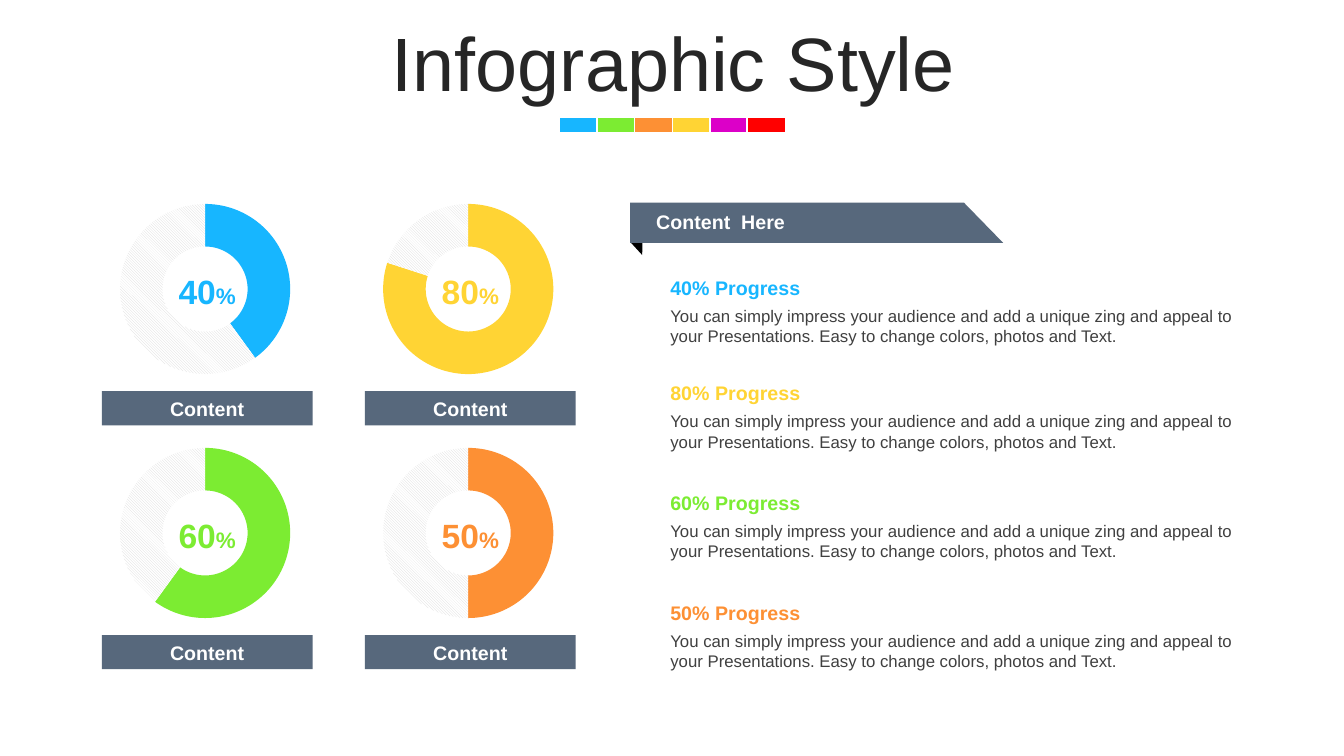
from dataclasses import dataclass

from lxml import etree
from pptx import Presentation
from pptx import util as u
from pptx.chart import data as chart_data
from pptx.dml.color import RGBColor
from pptx.enum import chart as chart_enum
from pptx.enum import dml, shapes, text
from pptx.oxml.ns import qn

PX = 9144  # EMU per px, 100 px to the inch
FONT = "Arial"

BLUE = RGBColor(0x17, 0xB6, 0xFF)
GREEN = RGBColor(0x7C, 0xEC, 0x32)
ORANGE = RGBColor(0xFD, 0x90, 0x34)
YELLOW = RGBColor(0xFF, 0xD4, 0x34)
MAGENTA = RGBColor(0xDC, 0x00, 0xC8)
RED = RGBColor(0xFF, 0x00, 0x00)
SLATE = RGBColor(0x57, 0x68, 0x7C)
WHITE = RGBColor(0xFF, 0xFF, 0xFF)
BLACK = RGBColor(0x00, 0x00, 0x00)
TITLE_GREY = RGBColor(0x26, 0x26, 0x26)
TEXT_GREY = RGBColor(0x40, 0x40, 0x40)
HATCH_GREY = RGBColor(0xD9, 0xD9, 0xD9)

STRIP_COLOURS = (BLUE, GREEN, ORANGE, YELLOW, MAGENTA, RED)
COLUMN_PITCH, ROW_PITCH = 261, 242
DESCRIPTION = (
    "You can simply impress your audience and add a unique zing and appeal to "
    "your Presentations. Easy to change colors, photos and Text."
)


@dataclass(frozen=True)
class Box:
    left: int
    top: int
    width: int
    height: int

    def emu(self) -> tuple[int, ...]:
        return tuple(n * PX for n in (self.left, self.top, self.width, self.height))

    def moved(self, right: int, down: int) -> "Box":
        return Box(self.left + right, self.top + down, self.width, self.height)


@dataclass(frozen=True)
class Span:
    words: str
    size: int
    colour: RGBColor
    bold: bool = True


@dataclass(frozen=True)
class Progress:
    percent: int
    colour: RGBColor
    column: int
    row: int
    text_top: int


PROGRESS = (
    Progress(40, BLUE, 0, 0, 268),
    Progress(80, YELLOW, 1, 0, 373),
    Progress(60, GREEN, 0, 1, 482),
    Progress(50, ORANGE, 1, 1, 591),
)


def write(shape, spans: list[Span], centred: bool = False, top: bool = False) -> None:
    frame = shape.text_frame
    frame.word_wrap = True
    frame.auto_size = text.MSO_AUTO_SIZE.NONE
    frame.vertical_anchor = text.MSO_ANCHOR.TOP if top else text.MSO_ANCHOR.MIDDLE
    para = frame.paragraphs[0]
    para.alignment = text.PP_ALIGN.CENTER if centred else text.PP_ALIGN.LEFT
    for span in spans:
        run = para.add_run()
        run.text = span.words
        run.font.name = FONT
        run.font.size = u.Pt(span.size)
        run.font.bold = span.bold
        run.font.color.rgb = span.colour


def add_text(page, box: Box, spans: list[Span], centred: bool = False, top: bool = False) -> None:
    write(page.shapes.add_textbox(*box.emu()), spans, centred, top)


def paint(shape, colour: RGBColor) -> None:
    shape.shadow.inherit = False
    shape.fill.solid()
    shape.fill.fore_color.rgb = colour
    shape.line.fill.background()


def add_bar(page, box: Box, colour: RGBColor):
    bar = page.shapes.add_shape(shapes.MSO_SHAPE.RECTANGLE, *box.emu())
    paint(bar, colour)
    return bar


def add_outline(page, points: list[tuple[int, int]], colour: RGBColor) -> None:
    builder = page.shapes.build_freeform(*points[0], scale=PX)
    builder.add_line_segments(points[1:], close=True)
    paint(builder.convert_to_shape(), colour)


def place_plot(chart) -> None:
    """Fix the inner plot area and the size of the ring's hole."""
    plot_area = chart._chartSpace.find(".//" + qn("c:plotArea"))
    for old in plot_area.findall(qn("c:layout")):
        plot_area.remove(old)
    layout = etree.Element(qn("c:layout"))
    manual = etree.SubElement(layout, qn("c:manualLayout"))
    settings = (("layoutTarget", "inner"), ("xMode", "edge"), ("yMode", "edge"),
                ("x", "0"), ("y", "0"), ("w", "0.976"), ("h", "0.942"))
    for name, value in settings:
        etree.SubElement(manual, qn(f"c:{name}")).set("val", value)
    plot_area.insert(0, layout)
    plot_area.find(".//" + qn("c:holeSize")).set("val", "75")


def add_ring(page, box: Box, item: Progress) -> None:
    values = chart_data.CategoryChartData()
    values.categories = ["1", "2"]
    values.add_series("Series 1", (item.percent, 100 - item.percent))
    kind = chart_enum.XL_CHART_TYPE.DOUGHNUT
    chart = page.shapes.add_chart(kind, *box.emu(), values).chart
    chart.has_legend = False
    chart.has_title = False
    chart.font.name = FONT
    chart.font.size = u.Pt(18)
    chart.font.color.rgb = BLACK
    place_plot(chart)
    done, rest = (chart.series[0].points[i].format for i in range(2))
    done.fill.solid()
    done.fill.fore_color.rgb = item.colour
    rest.fill.patterned()
    rest.fill.pattern = dml.MSO_PATTERN.LIGHT_DOWNWARD_DIAGONAL
    rest.fill.fore_color.rgb = HATCH_GREY
    rest.fill.back_color.rgb = WHITE
    for part in (done, rest):
        part.line.fill.background()


def add_title(page) -> None:
    title = page.shapes.title
    title.left, title.top, title.width, title.height = Box(35, 24, 1266, 79).emu()
    write(title, [Span("Infographic Style", 54, TITLE_GREY, False)], centred=True)
    title.text_frame.margin_top = 10 * PX
    para = title.text_frame.paragraphs[0]
    para.line_spacing = 0.9
    para.space_before = u.Pt(10)


def add_progress(page, item: Progress) -> None:
    shift = item.column * COLUMN_PITCH, item.row * ROW_PITCH
    add_ring(page, Box(119, 202, 173, 180).moved(*shift), item)
    figure = [Span(str(item.percent), 24, item.colour), Span("%", 16, item.colour)]
    add_text(page, Box(161, 264, 89, 50).moved(*shift), figure, centred=True)
    label = add_bar(page, Box(101, 388, 209, 34).moved(*shift), SLATE)
    write(label, [Span("Content", 14, WHITE)], centred=True)

    heading = Box(655, item.text_top, 579, 34)
    add_text(page, heading, [Span(f"{item.percent}% Progress", 14, item.colour)])
    body = Box(655, item.text_top + 30, 579, 50)
    add_text(page, body, [Span(DESCRIPTION, 12, TEXT_GREY, False)], top=True)


def main() -> None:
    deck = Presentation()
    deck.slide_width, deck.slide_height = u.Inches(13.33), u.Inches(7.5)
    page = deck.slides.add_slide(deck.slide_layouts.get_by_name("Title Only"))

    # Title and colour strip
    add_title(page)
    for i, colour in enumerate(STRIP_COLOURS):
        segment = add_bar(page, Box(555 + round(i * 37.2), 116, 38, 16), colour)
        segment.line.color.rgb = WHITE
        segment.line.width = u.Pt(1)

    # Rings with their labels and descriptions
    for item in PROGRESS:
        add_progress(page, item)

    # Folded ribbon
    add_outline(page, [(638, 203), (625, 202), (626, 241), (637, 253)], BLACK)
    add_outline(page, [(625, 201), (956, 201), (995, 241), (625, 241)], SLATE)
    add_text(page, Box(641, 203, 308, 34), [Span("Content  Here", 14, WHITE)])

    deck.save("out.pptx")


if __name__ == "__main__":
    main()
